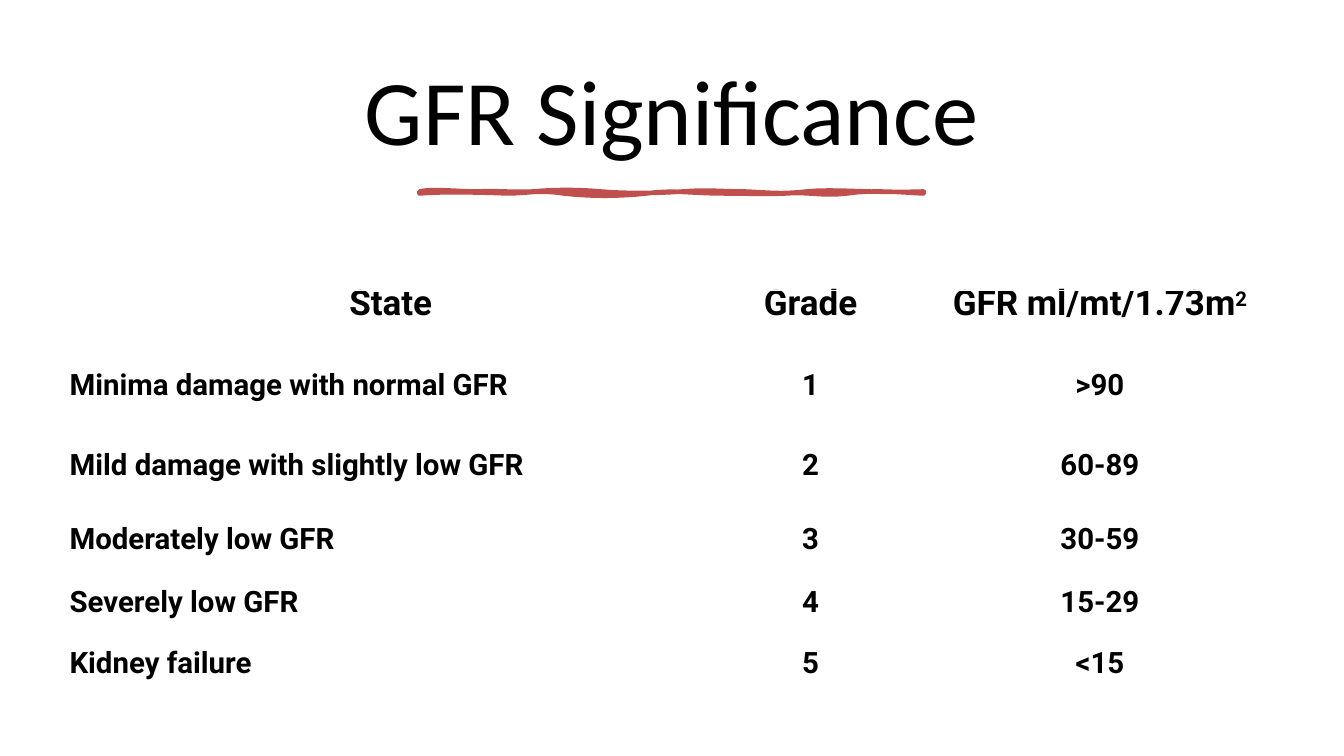
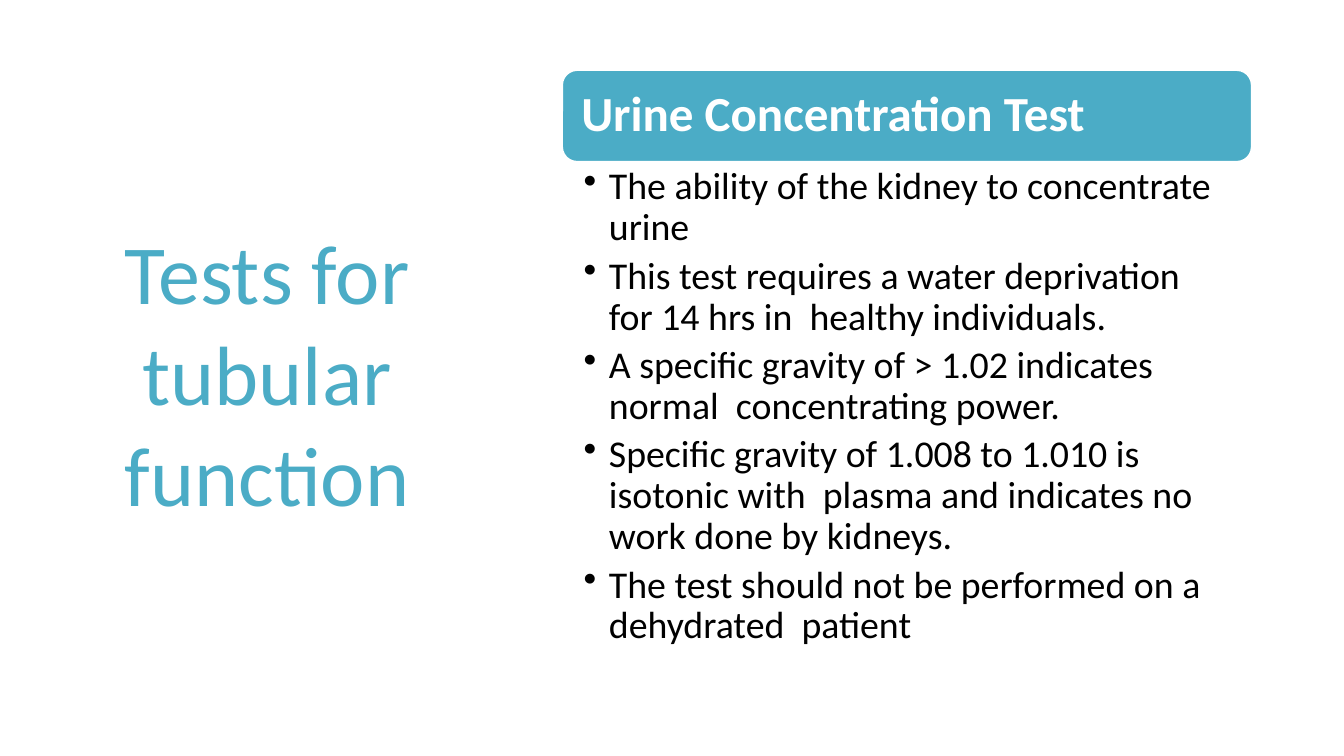
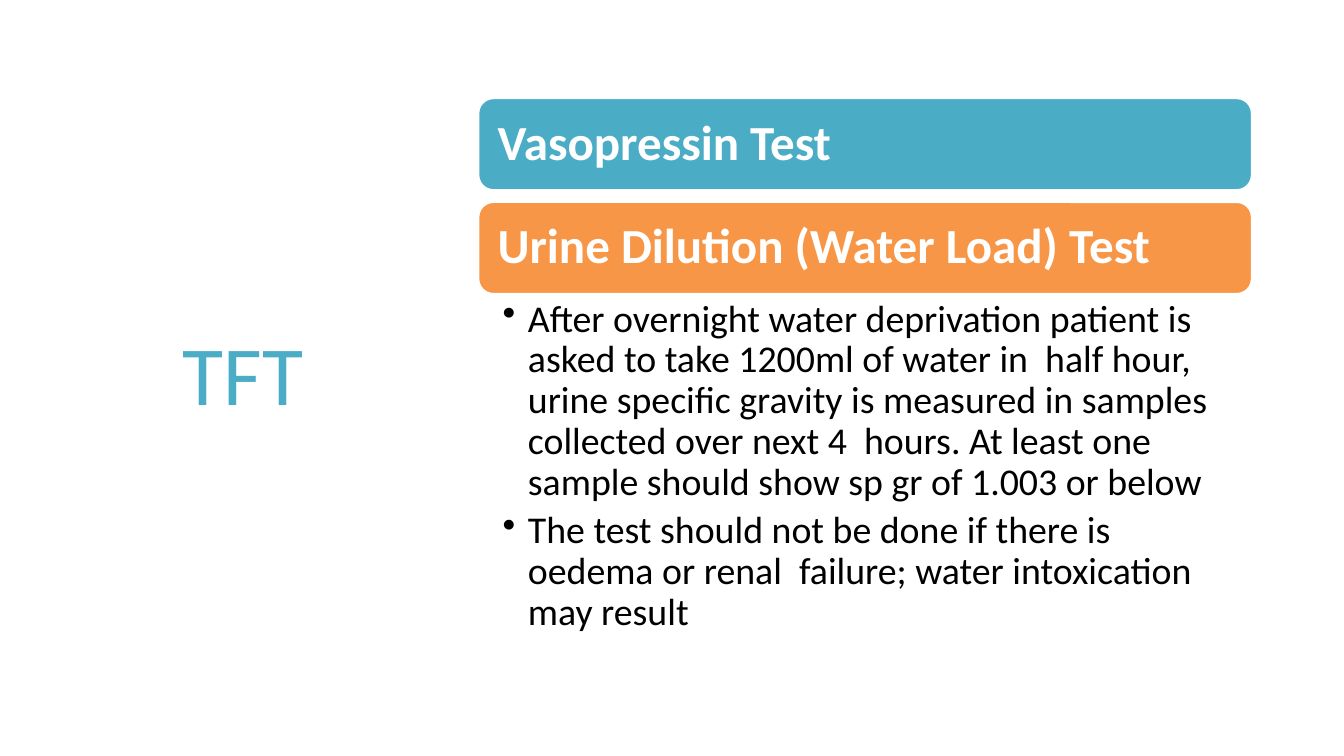
from lxml import etree
from pptx import Presentation
from pptx.dml.color import RGBColor
from pptx.enum import shapes, text
from pptx.oxml import ns
from pptx.util import Inches, Pt

COLORS = {"ink": "000000", "paper": "FFFFFF", "teal": "4BACC6",
          "orange": "F79646", "red": "C0504D"}
BODY_FONT, TABLE_FONT = "Calibri", "Roboto"
BAR_HEIGHT, BAR_PITCH = 0.92, 1.03

STROKE_START = (0, 0)
STROKE_CURVES = [
    (0.12, -0.03, 0.38, 0, 0.57, 0), (0.76, -0.01, 0.93, 0.01, 1.13, 0),
    (1.33, -0.02, 1.58, -0.02, 1.8, 0), (2.01, 0.02, 2.37, 0.02, 2.61, 0),
    (2.86, -0.02, 2.98, 0, 3.23, 0), (3.47, 0.01, 3.58, 0.03, 3.84, 0),
    (4.1, -0.03, 4.51, 0.02, 5, 0), (5.01, 0.01, 5, 0.01, 5, 0.02),
    (4.79, 0.01, 4.49, -0.02, 4.24, 0.02), (3.99, 0.05, 3.85, 0, 3.63, 0.02),
    (3.4, 0.03, 3.31, 0.02, 3.01, 0.02), (2.71, 0.02, 2.51, -0.02, 2.25, 0.02),
    (1.98, 0.05, 1.69, 0.05, 1.43, 0.02), (1.18, -0.02, 1.07, 0.02, 0.87, 0.02),
    (0.67, 0.01, 0.22, 0, 0, 0.02),
]

COLUMNS = [(6.34, 0.03), (1.97, 0.11), (3.7, 0.18)]
HEADINGS = ["State", "Grade", "GFR ml/mt/1.73m"]
HEADING_HEIGHT, HEADING_INDENT = 0.41, 0.09
STAGES = [
    (0.79, 0.36, "Minima damage with normal GFR", "1", ">90"),
    (0.81, 0.37, "Mild damage with slightly low GFR", "2", "60-89"),
    (0.71, 0.29, "Moderately low GFR", "3", "30-59"),
    (0.6, 0.21, "Severely low GFR", "4", "15-29"),
    (0.6, 0.21, "Kidney failure", "5", "<15"),
]

CONCENTRATION = [
    "The ability of the kidney to concentrate urine",
    "This test requires a water deprivation for 14 hrs in  healthy individuals.",
    "A specific gravity of > 1.02 indicates normal  concentrating power.",
    "Specific gravity of 1.008 to 1.010 is isotonic with  plasma and indicates "
    "no work done by kidneys.",
    "The test should not be performed on a dehydrated  patient",
]
DILUTION = [
    "After overnight water deprivation patient is asked to take 1200ml of water in  "
    "half hour, urine specific gravity is measured in samples collected over next 4  "
    "hours. At least one sample should show sp gr of 1.003 or below",
    "The test should not be done if there is oedema or renal  failure; water "
    "intoxication may result",
]


def rgb(name):
    """Return the palette colour called name."""
    return RGBColor.from_string(COLORS[name])


def add_run(paragraph, words, size, color="ink", font=BODY_FONT, bold=False):
    """Append one styled run."""
    run = paragraph.add_run()
    run.text = words
    run.font.size, run.font.name, run.font.bold = Pt(size), font, bold
    run.font.color.rgb = rgb(color)
    return run


def set_indent(paragraph, left, first=0):
    """Set the left margin and first-line indent of a paragraph."""
    properties = paragraph._p.get_or_add_pPr()
    properties.set("marL", str(Inches(left)))
    properties.set("indent", str(Inches(first)))
    return properties


def set_insets(target, left, top, right, bottom):
    """Set the inner margins of a text frame or cell."""
    target.margin_left, target.margin_right = Inches(left), Inches(right)
    target.margin_top, target.margin_bottom = Inches(top), Inches(bottom)


def add_title(slide, words, box, size, color, spacing=1.0):
    """Place a centred title in the box."""
    frame = slide.shapes.add_textbox(*map(Inches, box)).text_frame
    frame.word_wrap = True
    frame.vertical_anchor = text.MSO_ANCHOR.MIDDLE
    title = frame.paragraphs[0]
    title.alignment, title.line_spacing = text.PP_ALIGN.CENTER, spacing
    add_run(title, words, size, color)


def flatten(start, curves, steps=8):
    """Turn a chain of cubic curves into points."""
    points, (x, y) = [], start
    for x1, y1, x2, y2, x3, y3 in curves:
        for step in range(1, steps + 1):
            t = step / steps
            a, b, c, d = (1 - t) ** 3, 3 * t * (1 - t) ** 2, 3 * t * t * (1 - t), t ** 3
            points.append((a * x + b * x1 + c * x2 + d * x3,
                           a * y + b * y1 + c * y2 + d * y3))
        x, y = x3, y3
    return points


def add_brush_stroke(slide, left, top):
    """Draw the wavy underline from its left end."""
    builder = slide.shapes.build_freeform(Inches(left), Inches(top))
    builder.add_line_segments([(Inches(left + x), Inches(top + y))
                               for x, y in flatten(STROKE_START, STROKE_CURVES)])
    stroke = builder.convert_to_shape()
    stroke.shadow.inherit = False
    stroke.fill.solid()
    stroke.fill.fore_color.rgb = stroke.line.color.rgb = rgb("red")
    stroke.line.width = Pt(3.25)


def fill_cell(cell, words, size, indent, top, centred):
    """Write one bold table cell without a fill."""
    cell.fill.background()
    set_insets(cell, 0, top, 0, 0)
    entry = cell.text_frame.paragraphs[0]
    set_indent(entry, indent)
    entry.alignment = text.PP_ALIGN.CENTER if centred else text.PP_ALIGN.LEFT
    add_run(entry, words, size, font=TABLE_FONT, bold=True)
    return entry


def add_stage_table(slide, box):
    """Place the table of GFR stages in the box."""
    table = slide.shapes.add_table(len(STAGES) + 1, len(COLUMNS), *map(Inches, box)).table
    table.first_row = table.horz_banding = False
    table.rows[0].height = Inches(HEADING_HEIGHT)
    for col, ((width, indent), words) in enumerate(zip(COLUMNS, HEADINGS)):
        table.columns[col].width = Inches(width)
        heading = fill_cell(table.cell(0, col), words, 25,
                            indent if col else HEADING_INDENT, 0, True)
        heading.line_spacing = Pt(23.8)
    square = add_run(heading, "2", 25, font=TABLE_FONT, bold=True)
    square.font._element.set("baseline", "24000")
    for row, (height, top, *entries) in enumerate(STAGES, 1):
        table.rows[row].height = Inches(height)
        for col, words in enumerate(entries):
            fill_cell(table.cell(row, col), words, 21, COLUMNS[col][1], top, col > 0)


def add_bar(slide, words, color, box):
    """Place a rounded heading bar."""
    bar = slide.shapes.add_shape(shapes.MSO_SHAPE.ROUNDED_RECTANGLE, *map(Inches, box))
    bar.shadow.inherit = False
    bar.fill.solid()
    bar.fill.fore_color.rgb = rgb(color)
    bar.line.color.rgb, bar.line.width = rgb("paper"), Pt(2)
    frame = bar.text_frame
    frame.word_wrap = True
    frame.vertical_anchor = text.MSO_ANCHOR.MIDDLE
    set_insets(frame, 0.15, 0.15, 0.15, 0.15)
    heading = frame.paragraphs[0]
    heading.alignment, heading.line_spacing = text.PP_ALIGN.LEFT, 0.9
    add_run(heading, words, 35, "paper", bold=True)


def add_bullets(slide, items, box):
    """Place a bulleted list in the box."""
    frame = slide.shapes.add_textbox(*map(Inches, box)).text_frame
    frame.word_wrap = True
    set_insets(frame, box[2] * 0.032, 0.05, 0.27, 0.05)
    for index, words in enumerate(items):
        item = frame.add_paragraph() if index else frame.paragraphs[0]
        bullet = etree.SubElement(set_indent(item, 0.25, -0.25), ns.qn("a:buChar"))
        bullet.set("char", "•")
        item.line_spacing, item.space_after = 0.9, Pt(5.4)
        add_run(item, words, 27)


def add_test_panel(slide, bars, items, box):
    """Stack heading bars above the bullets that explain the last one."""
    left, top, width, height = box
    for index, (words, color) in enumerate(bars):
        add_bar(slide, words, color, (left, top + index * BAR_PITCH, width, BAR_HEIGHT))
    used = (len(bars) - 1) * BAR_PITCH + BAR_HEIGHT
    add_bullets(slide, items, (left, top + used, width, height - used))


def build_significance(slide):
    """Build the slide on GFR stages."""
    add_title(slide, "GFR Significance", (0.7, 0.46, 11.93, 1.37), 66, "ink", 0.9)
    add_brush_stroke(slide, 4.16, 1.9)
    add_stage_table(slide, (0.66, 2.88, 12.01, 3.92))


def build_test_slide(slide, title, title_width, bars, items, box):
    """Build a slide with a side title and a test panel."""
    add_title(slide, title, (0.57, 0.68, title_width, 6.02), 60, "teal")
    add_test_panel(slide, bars, items, box)


def main():
    """Build and save the deck."""
    deck = Presentation()
    deck.slide_width, deck.slide_height = Inches(13.33), Inches(7.5)
    significance, concentration, dilution = (
        deck.slides.add_slide(deck.slide_layouts[6]) for _ in range(3))
    build_significance(significance)
    build_test_slide(concentration, "Tests for tubular function", 4.16,
                     [("Urine Concentration Test", "teal")],
                     CONCENTRATION, (5.57, 0.69, 6.85, 5.99))
    build_test_slide(dilution, "TFT", 3.68,
                     [("Vasopressin Test", "teal"),
                      ("Urine Dilution (Water Load) Test", "orange")],
                     DILUTION, (4.74, 0.97, 7.68, 5.44))
    deck.save("out.pptx")


if __name__ == "__main__":
    main()
